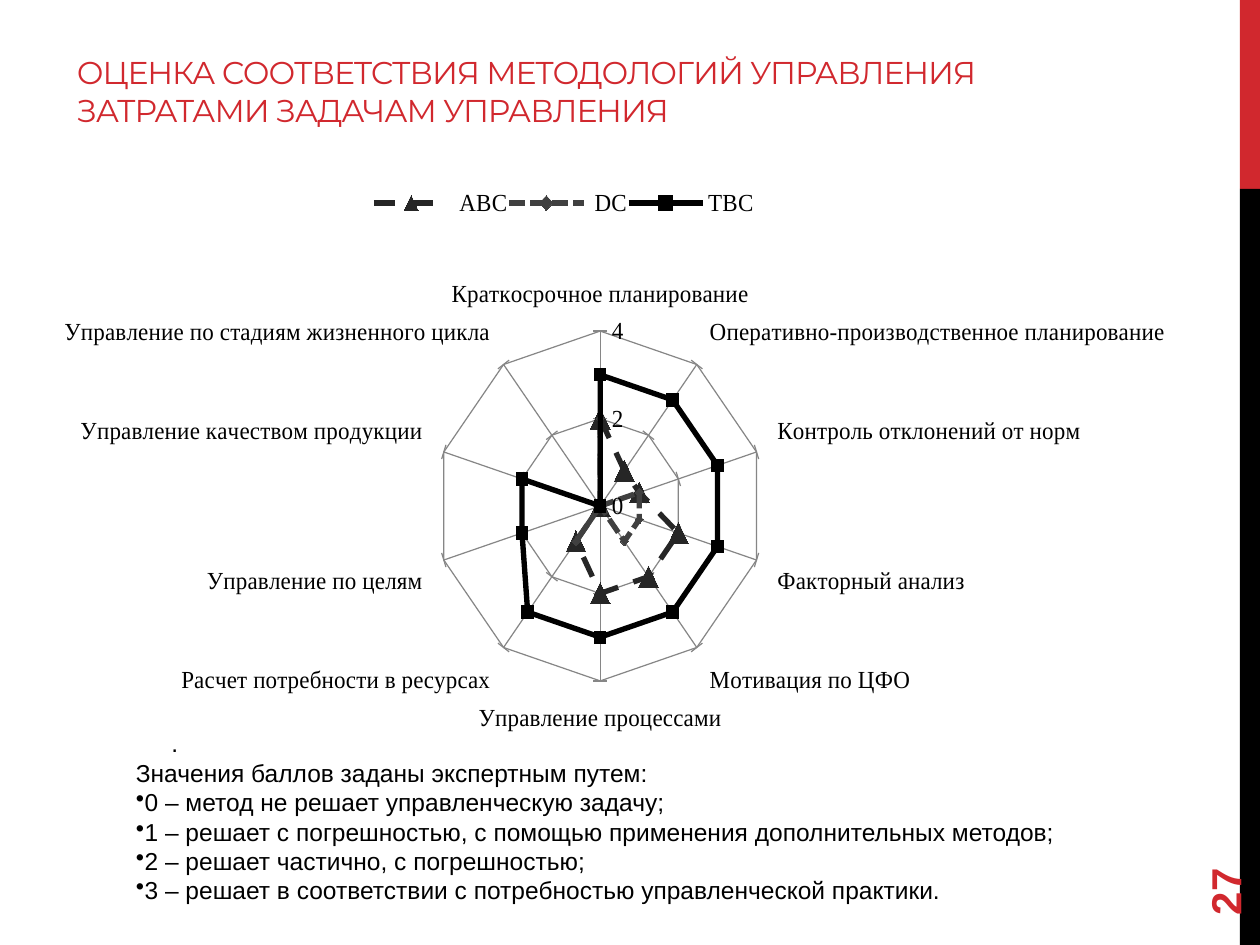
import pptx
import pptx.util
import pptx.chart.data
import pptx.dml.color
import pptx.enum.chart
import pptx.enum.dml
import pptx.enum.shapes
import pptx.enum.text
import pptx.oxml
import pptx.oxml.ns
from lxml import etree

Pt = pptx.util.Pt
RGB = pptx.dml.color.RGBColor.from_string
ANCHOR = pptx.enum.text.MSO_ANCHOR
ALIGN = pptx.enum.text.PP_ALIGN
DASH = pptx.enum.dml.MSO_LINE
MARKER = pptx.enum.chart.XL_MARKER_STYLE
COLORS = {"red": "D1282E", "black": "000000", "dark": "262626",
          "gray": "404040", "grid": "868686"}


def add_span(para, text, size, font, color, bold=False):
    span = para.add_run()
    span.text = text
    span.font.size = Pt(size)
    span.font.name = font
    span.font.bold = bold
    span.font.color.rgb = RGB(COLORS[color])
    return span


def set_layout(element, inner, **fractions):
    """Place a chart part by fractions of the chart area."""
    for old in element.findall(pptx.oxml.ns.qn("c:layout")):
        element.remove(old)
    layout = etree.Element(pptx.oxml.ns.qn("c:layout"))
    manual = etree.SubElement(layout, pptx.oxml.ns.qn("c:manualLayout"))
    settings = {"layoutTarget": "inner"} if inner else {}
    settings.update(xMode="edge", yMode="edge", **fractions)
    for name, value in settings.items():
        etree.SubElement(manual, pptx.oxml.ns.qn("c:" + name)).set("val", str(value))
    element.insert(0 if inner else 1, layout)


deck = pptx.Presentation()
deck.slide_width, deck.slide_height = Pt(720), Pt(540)
page = deck.slides.add_slide(deck.slide_layouts[5])

# Side bars
for top, height, color in ((0, 108, "red"), (108, 432, "black")):
    bar = page.shapes.add_shape(pptx.enum.shapes.MSO_SHAPE.RECTANGLE,
                                Pt(708.5), Pt(top), Pt(11.5), Pt(height))
    bar.shadow.inherit = False
    bar.fill.solid()
    bar.fill.fore_color.rgb = RGB(COLORS[color])
    bar.line.fill.background()

# Title
title = page.shapes.title
title.left, title.top, title.width, title.height = Pt(36.7), Pt(9.4), Pt(623.5), Pt(67.7)
frame = title.text_frame
frame.word_wrap = True
frame.auto_size = pptx.enum.text.MSO_AUTO_SIZE.NONE
frame.vertical_anchor = ANCHOR.BOTTOM
para = frame.paragraphs[0]
para.alignment = ALIGN.LEFT
span = add_span(para, "ОЦЕНКА СООТВЕТСТВИЯ МЕТОДОЛОГИЙ УПРАВЛЕНИЯ ЗАТРАТАМИ ЗАДАЧАМ УПРАВЛЕНИЯ",
                18, "Montserrat", "red")
span.font._element.set("spc", "-60")

# Page number
box = page.shapes.add_textbox(Pt(648), Pt(463.7), Pt(103.7), Pt(28.8))
box.rotation = 270
box.text_frame.word_wrap = True
box.text_frame.vertical_anchor = ANCHOR.MIDDLE
add_span(box.text_frame.paragraphs[0], "27", 24, "Arial", "red", bold=True)

# Radar chart
data = pptx.chart.data.CategoryChartData()
data.categories = [
    "Краткосрочное планирование", "Оперативно-производственное планирование",
    "Контроль отклонений от норм", "Факторный анализ", "Мотивация по ЦФО",
    "Управление процессами", "Расчет потребности в ресурсах", "Управление по целям",
    "Управление качеством продукции", "Управление по стадиям жизненного цикла"]
data.add_series(" АВС", (2, 1, 1, 2, 2, 2, 1, 0, 0, 0))
data.add_series(" DC", (2, 0, 1, 1, 1, 0, 1, 0, 0, 0))
data.add_series("ТВС", (3, 3, 3, 3, 3, 3, 3, 2, 2, 0))
chart = page.shapes.add_chart(pptx.enum.chart.XL_CHART_TYPE.RADAR_MARKERS,
                              Pt(36.7), Pt(100), Pt(629.3), Pt(357), data).chart
chart.has_title = False
chart.font.size = Pt(14)
chart.font.name = "Times New Roman"
chart.font.color.rgb = RGB(COLORS["black"])
chart.plots[0].vary_by_categories = False

styles = (("dark", DASH.DASH, MARKER.TRIANGLE, 12, "dark"),
          ("gray", DASH.SQUARE_DOT, MARKER.DIAMOND, 5, "gray"),
          ("black", DASH.SOLID, MARKER.SQUARE, 7, "black"))
for series, (color, dash, shape, size, marker_color) in zip(chart.plots[0].series, styles):
    series.smooth = False
    series.format.line.color.rgb = RGB(COLORS[color])
    series.format.line.width = Pt(3.25)
    series.format.line.dash_style = dash
    series.marker.style = shape
    series.marker.size = size
    series.marker.format.fill.solid()
    series.marker.format.fill.fore_color.rgb = RGB(COLORS[marker_color])
    series.marker.format.line.color.rgb = RGB(COLORS[marker_color])

# Axes, plot area and legend
scale = chart.value_axis
scale.minimum_scale, scale.maximum_scale, scale.major_unit = 0, 4, 2
scale.major_tick_mark = pptx.enum.chart.XL_TICK_MARK.CROSS
scale.tick_labels.number_format = "General"
scale.tick_labels.number_format_is_linked = False
for axis in (scale, chart.category_axis):
    axis.has_major_gridlines = True
    for line in (axis.major_gridlines.format.line, axis.format.line):
        line.color.rgb = RGB(COLORS["grid"])
        line.width = Pt(0.75)
chart.has_legend = True
chart.legend.position = pptx.enum.chart.XL_LEGEND_POSITION.TOP
chart.legend.include_in_layout = False
set_layout(chart.plots[0]._element.getparent(), True, x=0.33, y=0.25, w=0.32, h=0.56)
set_layout(chart.legend._element, False, x=0.27, y=0.02, w=0.37, h=0.05)

# Score legend below the chart
box = page.shapes.add_textbox(Pt(70.6), Pt(394.6), Pt(542.2), Pt(126))
frame = box.text_frame
frame.word_wrap = False
frame.vertical_anchor = ANCHOR.BOTTOM
notes = (
    (".", 20.2, False),
    ("Значения баллов заданы экспертным путем:", 0, False),
    ("0 – метод не решает управленческую задачу;", 0, True),
    ("1 – решает с погрешностью, с помощью применения дополнительных методов;", 0, True),
    ("2 – решает частично, с погрешностью;", 0, True),
    ("3 – решает в соответствии с потребностью управленческой практики.", 0, True))
for index, (text, indent, bulleted) in enumerate(notes):
    para = frame.add_paragraph() if index else frame.paragraphs[0]
    para.alignment = ALIGN.JUSTIFY
    para.line_spacing = Pt(16.8)
    props = para._p.get_or_add_pPr()
    props.set("marL", "0")
    props.set("indent", str(int(Pt(indent))))
    if bulleted:
        etree.SubElement(props, pptx.oxml.ns.qn("a:buChar")).set("char", "•")
    add_span(para, text, 14, "Arial", "black")

deck.save("out.pptx")
